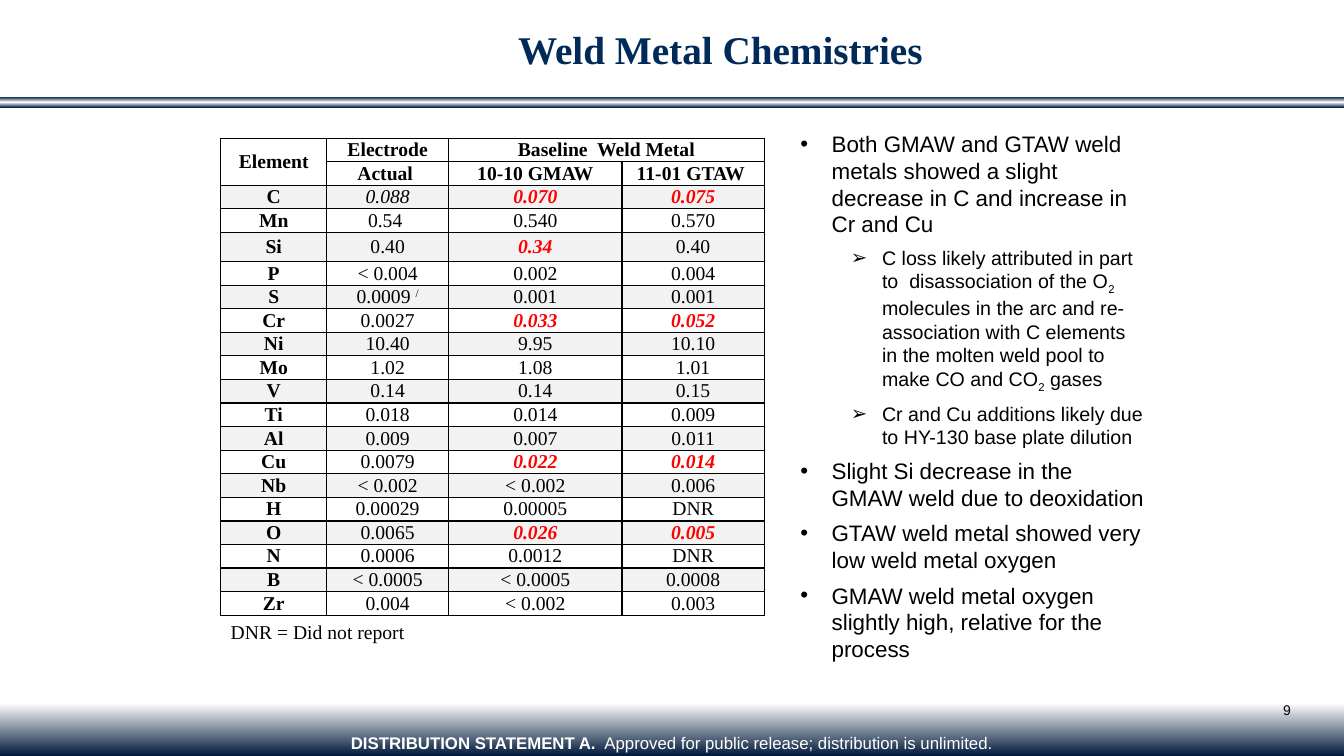
from copy import deepcopy

from lxml import etree
from pptx import Presentation
from pptx.dml.color import RGBColor
from pptx.enum import shapes, text
from pptx.oxml.ns import qn
from pptx.util import Inches, Pt

NAVY = RGBColor(0x00, 0x18, 0x3A)
TITLE = RGBColor(0x00, 0x2A, 0x58)
WHITE = RGBColor(0xFF, 0xFF, 0xFF)
GREY = RGBColor(0xF2, 0xF2, 0xF2)
BLACK = RGBColor(0, 0, 0)
RED = RGBColor(0xFF, 0, 0)
SANS, SERIF = "Arial", "Times New Roman"
LEFT, MID, RIGHT = text.PP_ALIGN.LEFT, text.PP_ALIGN.CENTER, text.PP_ALIGN.RIGHT

COLS = [1.05, 1.21, 1.72, 1.41]
ROW, TALL = 0.23, 0.29
# A star marks a value that is stressed in red.
DATA = [
    ("C", "0.088", "*0.070", "*0.075"),
    ("Mn", "0.54 ", "0.540", "0.570"),
    ("Si", "0.40", "*0.34", "0.40"),
    ("P", "< 0.004", "0.002", "0.004"),
    ("S", "0.0009 |/|", "0.001", "0.001"),
    ("Cr", "0.0027", "*0.033", "*0.052"),
    ("Ni", "10.40", "9.95", "10.10"),
    ("Mo", "1.02", "1.08", "1.01"),
    ("V", "0.14", "0.14", "0.15"),
    ("Ti", "0.018", "0.014", "0.009"),
    ("Al", "0.009", "0.007", "0.011"),
    ("Cu", "0.0079", "*0.022", "*0.014"),
    ("Nb", "< 0.002", "< 0.002", "0.006"),
    ("H", "0.00029", "0.00005", "DNR"),
    ("O", "0.0065", "*0.026", "*0.005"),
    ("N", "0.0006", "0.0012", "DNR"),
    ("B", "< 0.0005", "< 0.0005", "0.0008"),
    ("Zr", "0.004", "< 0.002", "0.003"),
]
HEAD = [
    ("Element", "Electrode", "Baseline  Weld Metal", ""),
    ("", "Actual ", "10-10 GMAW", "11-01 GTAW "),
]
NOTES = [
    (0, "Both GMAW and GTAW weld metals showed a slight decrease in C and "
        "increase in Cr and Cu"),
    (1, "C loss likely attributed in part to  disassociation of the O|2| molecules "
        "in the arc and re-association with C elements in the molten weld pool "
        "to make CO and CO|2| gases"),
    (1, "Cr and Cu additions likely due to HY-130 base plate dilution"),
    (0, "Slight Si decrease in the GMAW weld due to deoxidation"),
    (0, "GTAW weld metal showed very low weld metal oxygen"),
    (0, "GMAW weld metal oxygen slightly high, relative for the process"),
]


def blend(fill, stops):
    """Fill from top to bottom through (position, colour) stops."""
    fill.gradient()
    fill.gradient_angle = 270
    first = fill.gradient_stops[0]._gs
    for _ in stops[2:]:
        first.addnext(deepcopy(first))
    for stop, (place, color) in zip(fill.gradient_stops, stops):
        stop.position = place
        stop.color.rgb = color


def style(para, size, face, color, bold=False, italic=False, align=LEFT):
    para.alignment = align
    font = para.font
    font.size, font.name, font.bold, font.italic = Pt(size), face, bold, italic
    font.color.rgb = color


def write(para, words, shift):
    """Add runs; parts between bars are raised or lowered by shift."""
    for i, part in enumerate(words.split("|")):
        if part:
            run = para.add_run()
            run.text = part
            if i % 2:
                run._r.get_or_add_rPr().set("baseline", str(shift))


def add_box(slide, x, y, w, h):
    frame = slide.shapes.add_textbox(Inches(x), Inches(y), Inches(w), Inches(h)).text_frame
    frame.word_wrap = True
    return frame


def add_line(slide, place, words, *look, **more):
    frame = add_box(slide, *place)
    para = frame.paragraphs[0]
    para.text = words
    style(para, *look, **more)
    return frame


def add_band(slide, wide):
    band = slide.shapes.add_shape(
        shapes.MSO_SHAPE.RECTANGLE, 0, Inches(0.96), wide, Inches(0.11))
    band.shadow.inherit = False
    band.line.fill.background()
    blend(band.fill, [(0, NAVY), (0.5, WHITE), (1, NAVY)])


def add_edges(cell):
    props = cell._tc.get_or_add_tcPr()
    for i, side in enumerate(("lnL", "lnR", "lnT", "lnB")):
        edge = etree.Element(qn("a:" + side), w=str(Pt(1)))
        solid = etree.SubElement(edge, qn("a:solidFill"))
        etree.SubElement(solid, qn("a:srgbClr"), val=str(BLACK))
        props.insert(i, edge)


def fill_cell(cell, words, shade, bold, italic):
    hot = words.startswith("*")
    cell.margin_left = cell.margin_right = Inches(0.09)
    cell.margin_top = cell.margin_bottom = 0
    cell.vertical_anchor = text.MSO_ANCHOR.MIDDLE
    cell.fill.solid()
    cell.fill.fore_color.rgb = shade
    add_edges(cell)
    para = cell.text_frame.paragraphs[0]
    write(para, words.lstrip("*"), 30000)
    style(para, 14, SERIF, RED if hot else BLACK, bold or hot, italic or hot, MID)


def add_grid(slide):
    rows = HEAD + DATA
    grid = slide.shapes.add_table(
        len(rows), len(COLS), Inches(2.19), Inches(1.37),
        Inches(sum(COLS)), Inches(ROW * len(rows))).table
    for col, wide in zip(grid.columns, COLS):
        col.width = Inches(wide)
    for r, row in enumerate(rows):
        grid.rows[r].height = Inches(TALL if row[0] == "Si" else ROW)
        head = r < len(HEAD)
        shade = WHITE if head or r % 2 else GREY
        for c, words in enumerate(row):
            fill_cell(grid.cell(r, c), words, shade, head or c == 0, words == "0.088")
    grid.cell(0, 0).merge(grid.cell(1, 0))
    grid.cell(0, 2).merge(grid.cell(0, 3))


def add_notes(slide):
    frame = add_box(slide, 7.84, 1.24, 3.62, 5.37)
    for i, (level, words) in enumerate(NOTES):
        para = frame.add_paragraph() if i else frame.paragraphs[0]
        para.level = level
        props = para._p.get_or_add_pPr()
        props.set("marL", str(Inches((0.31, 0.81)[level])))
        props.set("indent", str(Inches(-0.31)))
        etree.SubElement(props, qn("a:buFont"), typeface=SANS)
        etree.SubElement(props, qn("a:buChar"), char="•➢"[level])
        para.space_after = Pt(6)
        write(para, words, -25000)
        style(para, (16, 14)[level], SANS, BLACK)


def add_foot(slide):
    para = add_box(slide, 0, 7.22, 13.33, 0.26).paragraphs[0]
    for words, bold in (("DISTRIBUTION STATEMENT A. ", True),
                        (" Approved for public release; distribution is unlimited.", False)):
        run = para.add_run()
        run.text = words
        run.font.bold = bold
    style(para, 12, SANS, WHITE, align=MID)


def main():
    deck = Presentation()
    deck.slide_width, deck.slide_height = Inches(13.33), Inches(7.5)
    slide = deck.slides.add_slide(deck.slide_layouts[6])
    blend(slide.background.fill, [(0.93, WHITE), (1, NAVY)])
    add_band(slide, deck.slide_width)
    add_foot(slide)
    add_line(slide, (10.12, 6.91, 2.78, 0.5), "9", 10, SANS, BLACK, align=RIGHT)
    add_grid(slide)
    title = add_line(slide, (2.73, 0.02, 8.83, 0.97), "Weld Metal Chemistries",
                     28, SERIF, TITLE, bold=True, align=MID)
    title.vertical_anchor = text.MSO_ANCHOR.MIDDLE
    title.paragraphs[0].line_spacing = Pt(30)
    add_notes(slide)
    add_line(slide, (2.19, 6.1, 2.29, 0.34), "DNR = Did not report", 14, SERIF, BLACK)
    deck.save("out.pptx")


if __name__ == "__main__":
    main()
